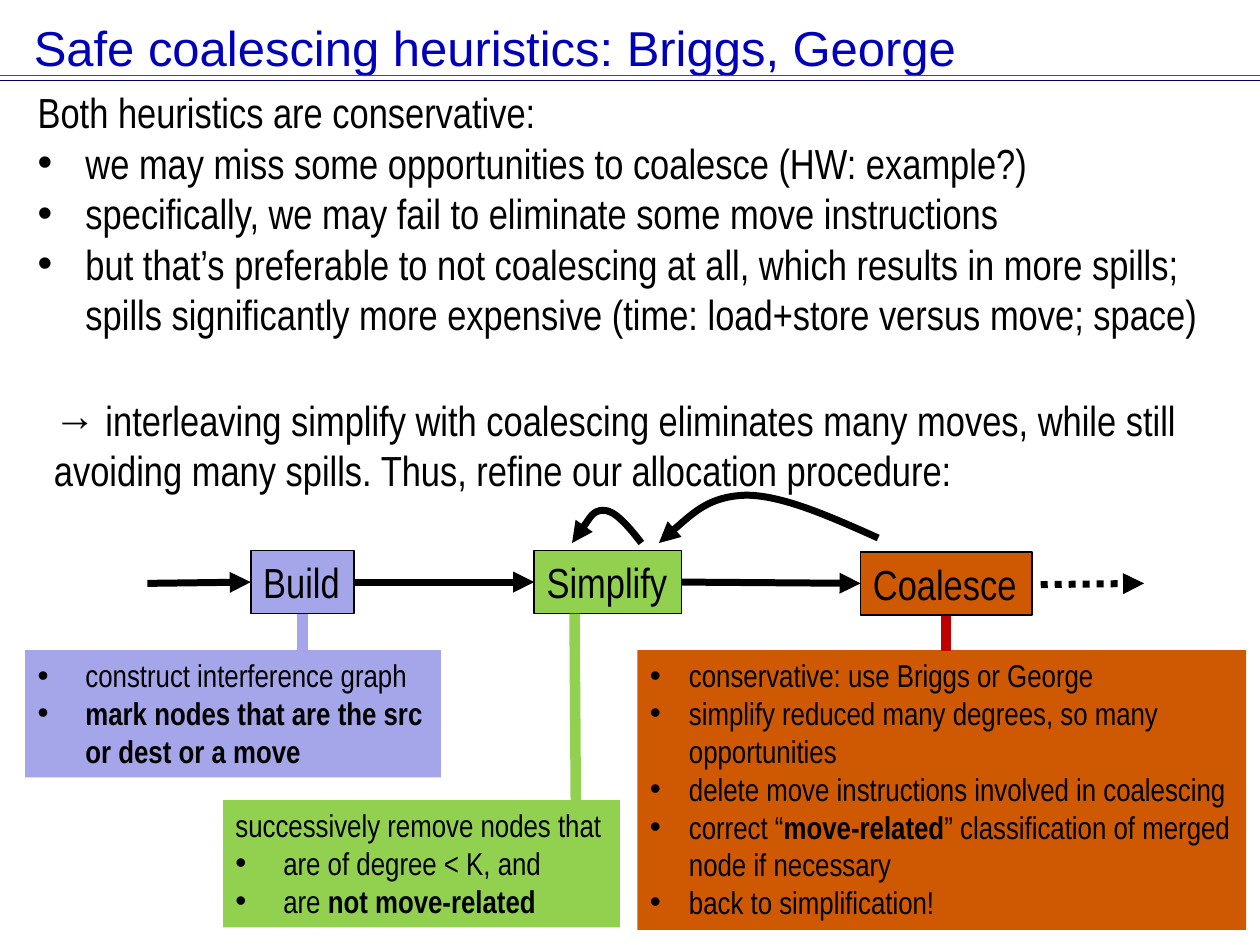
from pptx import Presentation
from pptx.dml.color import RGBColor
from pptx.enum.dml import MSO_LINE
from pptx.enum.shapes import MSO_CONNECTOR, MSO_SHAPE
from pptx.enum.text import MSO_ANCHOR, MSO_AUTO_SIZE, PP_ALIGN
from pptx.oxml.ns import qn
from pptx.util import Inches, Pt
from lxml import etree

RECT, STRAIGHT = MSO_SHAPE.RECTANGLE, MSO_CONNECTOR.STRAIGHT
TOP, MIDDLE, LEFT = MSO_ANCHOR.TOP, MSO_ANCHOR.MIDDLE, PP_ALIGN.LEFT
GROW, FIXED, DOTS = MSO_AUTO_SIZE.SHAPE_TO_FIT_TEXT, MSO_AUTO_SIZE.NONE, MSO_LINE.ROUND_DOT

THEME = {
    "ink": "000000", "title": "0000BA", "red": "FF0000", "navy": "000066",
    "build": "A5A5E9", "simple": "92D050", "merge": "CE5902", "stem": "C00000",
    "head": 28, "body": 24, "note": 18,
    "sans": "Arial", "slim": "Arial Narrow",
}

deck = Presentation()
deck.slide_width, deck.slide_height = Inches(10), Inches(7.5)
unit = deck.slide_width // 10  # square grid: 10 columns by 7.5 rows
slide = deck.slides.add_slide(deck.slide_layouts[6])
shapes = slide.shapes


def write(shape, paras, size, indent=0.38, font="slim", color="ink", **frame):
    """Fill a shape with text: a leading • makes a bullet, ** marks bold."""
    style = {"word_wrap": True, "auto_size": GROW, "vertical_anchor": TOP} | frame
    for key, value in style.items():
        setattr(shape.text_frame, key, value)
    for i, text in enumerate(paras):
        para = shape.text_frame.paragraphs[0] if i == 0 else shape.text_frame.add_paragraph()
        para.alignment = LEFT
        if text.startswith("•"):
            text = text[1:]
            props = para._p.get_or_add_pPr()
            props.set("marL", str(int(unit * indent)))
            props.set("indent", str(-int(unit * indent)))
            etree.SubElement(props, qn("a:buFont"), typeface="Arial")
            etree.SubElement(props, qn("a:buChar"), char="•")
        for j, part in enumerate(text.split("**")):
            run = para.add_run()
            run.text = part
            look = {"name": THEME[font], "size": Pt(THEME[size]), "bold": j % 2 == 1}
            for key, value in look.items():
                setattr(run.font, key, value)
            run.font.color.rgb = RGBColor.from_string(THEME[color])


def stroke(shape, color, width, dash=None, arrow=False):
    shape.line.color.rgb = RGBColor.from_string(THEME[color])
    shape.line.width = Pt(width)
    if dash:
        shape.line.dash_style = dash
    if arrow:
        etree.SubElement(shape.line._get_or_add_ln(), qn("a:tailEnd"), type="triangle")
    props = shape._element.spPr
    if props.find(qn("a:effectLst")) is None:
        etree.SubElement(props, qn("a:effectLst"))


# Heading and running text
fixed = {"font": "sans", "color": "title", "auto_size": FIXED, "vertical_anchor": MIDDLE}
texts = [
    ((0.17, 0.08, 9.7, 0.59), "head", fixed, ["Safe coalescing heuristics: Briggs, George"]),
    ((0.2, 0.64, 9.75, 2.12), "body", {}, [
        "Both heuristics are conservative:",
        "•we may miss some opportunities to coalesce (HW: example?)",
        "•specifically, we may fail to eliminate some move instructions",
        "•but that’s preferable to not coalescing at all, which results in more spills; "
        "spills significantly more expensive (time: load+store versus move; space)"]),
    ((0.33, 3.08, 9.13, 0.91), "body", {}, [
        "→ interleaving simplify with coalescing eliminates many moves, while still "
        "avoiding many spills. Thus, refine our allocation procedure:"]),
]
for at, size, style, paras in texts:
    write(shapes.add_textbox(*[int(unit * v) for v in at]), paras, size, **style)

# Steps and their notes
label = {"word_wrap": False}
boxes = [
    ((1.99, 4.37, 0.82, 0.5), "build", "body", label, ["Build"]),
    ((4.24, 4.37, 1.17, 0.5), "simple", "body", label, ["Simplify"]),
    ((6.83, 4.38, 1.36, 0.5), "merge", "body", label, ["Coalesce"]),
    ((0.2, 5.16, 3.3, 1.01), "build", "note", {}, [
        "•construct interference graph",
        "•**mark nodes that are the src or dest or a move"]),
    ((1.77, 6.35, 3.15, 1.01), "simple", "note", {}, [
        "successively remove nodes that",
        "•are of degree < K, and",
        "•are **not move-related"]),
    ((5.06, 5.16, 4.83, 2.22), "merge", "note", {"indent": 0.31}, [
        "•conservative: use Briggs or George",
        "•simplify reduced many degrees, so many opportunities",
        "•delete move instructions involved in coalescing",
        "•correct “**move-related**” classification of merged node if necessary",
        "•back to simplification!"]),
]
for at, fill, size, style, paras in boxes:
    box = shapes.add_shape(RECT, *[int(unit * v) for v in at])
    box.shadow.inherit = False
    box.fill.solid()
    box.fill.fore_color.rgb = RGBColor.from_string(THEME[fill])
    if style is label:
        stroke(box, "ink", 1)
    else:
        box.line.fill.background()
    write(box, paras, size, **style)

# Rules, flow arrows and stems
flow = {"color": "ink", "width": 4, "arrow": True}
lines = [
    ((0, 0.6, 10, 0.6), {"color": "red", "width": 1}),
    ((0, 0.64, 10, 0.64), {"color": "navy", "width": 1}),
    ((1.17, 4.63, 1.99, 4.62), flow),
    ((2.81, 4.62, 4.24, 4.62), flow),
    ((5.41, 4.62, 6.83, 4.63), flow),
    ((8.26, 4.64, 9.08, 4.63), flow | {"dash": DOTS}),
    ((2.4, 4.87, 2.4, 5.16), {"color": "build", "width": 6}),
    ((7.51, 4.89, 7.51, 5.17), {"color": "stem", "width": 6}),
    ((4.56, 4.87, 4.57, 6.35), {"color": "simple", "width": 6}),
]
for ends, style in lines:
    stroke(shapes.add_connector(STRAIGHT, *[int(unit * v) for v in ends]), **style)

# Loops back: every three points after the start make one Bézier piece
loops = [
    [(5.09, 4.31), (4.99, 4.18), (4.88, 4.05), (4.79, 4.05),
     (4.7, 4.05), (4.54, 4.31), (4.54, 4.31)],
    [(6.97, 4.27), (6.59, 4.1), (6.21, 3.93), (5.92, 3.93),
     (5.63, 3.94), (5.43, 4.13), (5.23, 4.31)],
]
for loop in loops:
    start, *rest = [(int(unit * x), int(unit * y)) for x, y in loop]
    pen = shapes.build_freeform(*start)
    pen.add_line_segments(rest, close=False)
    curve = pen.convert_to_shape()
    curve.shadow.inherit = False
    curve.fill.background()
    legs = list(curve._element.iter(qn("a:lnTo")))
    for i in range(0, len(legs), 3):
        piece = etree.SubElement(legs[i].getparent(), qn("a:cubicBezTo"))
        for leg in legs[i:i + 3]:
            piece.append(leg[0])
            leg.getparent().remove(leg)
    stroke(curve, **flow)

deck.save("out.pptx")
